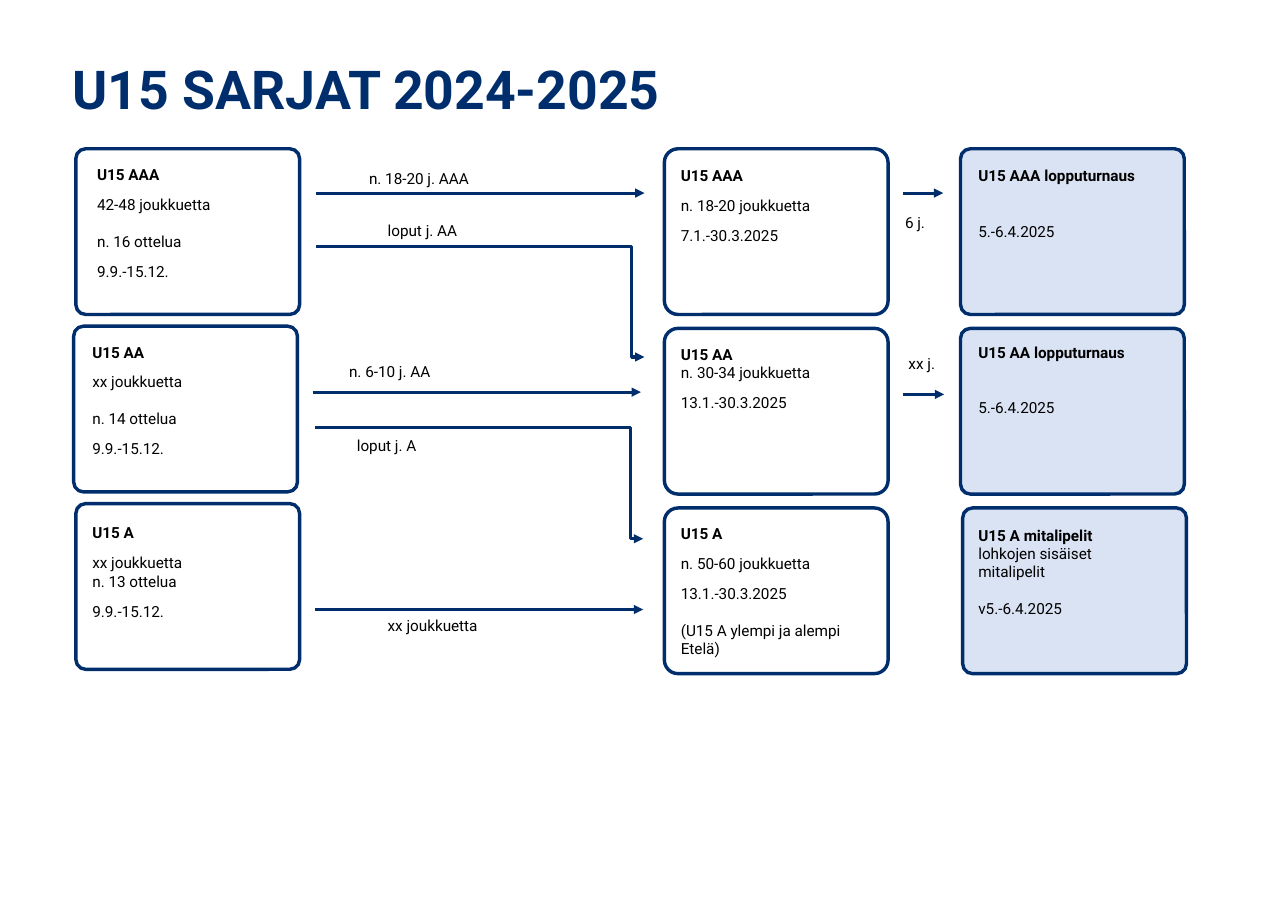
import dataclasses

import lxml.etree
import pptx
import pptx.dml.color
import pptx.enum.shapes
import pptx.enum.text
import pptx.oxml.ns
import pptx.util

Cm = pptx.util.Cm
Pt = pptx.util.Pt
qn = pptx.oxml.ns.qn


@dataclasses.dataclass(frozen=True)
class Theme:
    font: str = "Roboto"
    navy: str = "002E6D"
    black: str = "000000"
    pale: str = "DAE3F3"
    title: float = 35
    body: float = 10
    border: float = 2.25
    arrow: float = 2


THEME = Theme()
WIDTH, HEIGHT = 5.16, 3.82
SMALL, LARGE, DOUBLE = 7.5, 12, 24
ROUND, SOFT = 0.059, 0.083

CARDS = [
    (1.75, 3.43, 2.24, 3.81, ROUND, None,
     [(0, "U15 AAA"), (SMALL, "42-48 joukkuetta"),
      (LARGE, "n. 16 ottelua"), (SMALL, "9.9.-15.12.")]),
    (1.7, 7.52, 2.13, 7.9, ROUND, None,
     [(0, "U15 AA"), (SMALL, "xx joukkuetta"),
      (LARGE, "n. 14 ottelua"), (SMALL, "9.9.-15.12.")]),
    (1.75, 11.61, 2.13, 12.07, ROUND, None,
     [(0, "U15 A"), (SMALL, "xx joukkuetta"),
      (0, "n. 13 ottelua"), (SMALL, "9.9.-15.12.")]),
    (15.32, 3.43, 15.7, 3.84, SOFT, None,
     [(0, "U15 AAA"), (SMALL, "n. 18-20 joukkuetta"),
      (SMALL, "7.1.-30.3.2025")]),
    (15.32, 7.57, 15.7, 7.95, SOFT, None,
     [(0, "U15 AA"), (0, "n. 30-34 joukkuetta"),
      (SMALL, "13.1.-30.3.2025")]),
    (15.32, 11.71, 15.7, 12.09, SOFT, None,
     [(0, "U15 A"), (SMALL, "n. 50-60 joukkuetta"),
      (SMALL, "13.1.-30.3.2025"),
      (LARGE, "(U15 A ylempi ja alempi Etelä)")]),
    (22.15, 3.43, 22.56, 3.84, ROUND, THEME.pale,
     [(0, "U15 AAA lopputurnaus"), (DOUBLE, "5.-6.4.2025")]),
    (22.15, 7.57, 22.56, 7.9, ROUND, THEME.pale,
     [(0, "U15 AA lopputurnaus"), (DOUBLE, "5.-6.4.2025")]),
    (22.2, 11.71, 22.56, 12.12, ROUND, THEME.pale,
     [(0, "U15 A mitalipelit"), (0, "lohkojen sisäiset mitalipelit"),
      (LARGE, "v5.-6.4.2025")]),
]

ARROWS = [
    (7.29, 4.45, 14.86, 4.45),
    (7.29, 5.69, 14.86, 8.23),
    (7.21, 9.04, 14.78, 9.04),
    (7.26, 9.86, 14.83, 12.42),
    (7.27, 14.05, 14.83, 14.05),
    (20.83, 4.45, 21.75, 4.45),
    (20.83, 9.09, 21.77, 9.09),
]

LABELS = [
    (8.26, 3.78, 5.69, "n. 18-20 j. AAA"),
    (8.69, 4.98, 5.69, "loput j. AA"),
    (7.8, 8.23, 5.69, "n. 6-10 j. AA"),
    (7.98, 9.93, 5.69, "loput j. A"),
    (8.69, 14.07, 4.6, "xx joukkuetta"),
    (20.62, 4.78, 1.45, "6 j."),
    (20.7, 8.03, 1.45, "xx j."),
]


def paint(hue):
    return pptx.dml.color.RGBColor.from_string(hue)


def style(para, size, hue, bold=False):
    para.alignment = pptx.enum.text.PP_ALIGN.LEFT
    for run in para.runs:
        font = run.font
        font.name = THEME.font
        font.size = Pt(size)
        font.bold = bold
        font.color.rgb = paint(hue)


def place(shape, left, top, width, height):
    shape.left, shape.top = Cm(left), Cm(top)
    shape.width, shape.height = Cm(width), Cm(height)


def add_title(slide, text):
    title = slide.shapes.title
    place(title, 1.42, 1.17, 24.49, 1.75)
    frame = title.text_frame
    frame.text = text
    frame.auto_size = pptx.enum.text.MSO_AUTO_SIZE.NONE
    frame.vertical_anchor = pptx.enum.text.MSO_ANCHOR.TOP
    style(frame.paragraphs[0], THEME.title, THEME.navy, True)


def add_card(slide, left, top, text_left, text_top, curve, fill, lines):
    kind = pptx.enum.shapes.MSO_SHAPE.ROUNDED_RECTANGLE
    card = slide.shapes.add_shape(
        kind, Cm(left), Cm(top), Cm(WIDTH), Cm(HEIGHT))
    card.adjustments[0] = curve
    card.shadow.inherit = False
    card.line.color.rgb = paint(THEME.navy)
    card.line.width = Pt(THEME.border)
    if fill:
        card.fill.solid()
        card.fill.fore_color.rgb = paint(fill)
    else:
        card.fill.background()
    inset = 0.29 * curve * HEIGHT
    frame = card.text_frame
    frame.word_wrap = True
    frame.vertical_anchor = pptx.enum.text.MSO_ANCHOR.TOP
    frame.margin_left = Cm(text_left - left - inset)
    frame.margin_top = Cm(text_top - top - inset)
    frame.margin_right = Cm(0.6)
    frame.margin_bottom = 0
    frame.text = "\n".join(text for gap, text in lines)
    for rank, (para, (gap, text)) in enumerate(zip(frame.paragraphs, lines)):
        para.space_before = Pt(gap)
        style(para, THEME.body, THEME.black, rank == 0)


def add_arrow(slide, left, top, right, base):
    kinds = pptx.enum.shapes.MSO_CONNECTOR
    bent = top != base
    kind = kinds.ELBOW if bent else kinds.STRAIGHT
    arrow = slide.shapes.add_connector(
        kind, Cm(left), Cm(top), Cm(right), Cm(base))
    arrow.line.color.rgb = paint(THEME.navy)
    arrow.line.width = Pt(THEME.arrow)
    props = arrow._element.spPr
    sub = lxml.etree.SubElement
    sub(props.find(qn("a:ln")), qn("a:tailEnd"), type="triangle")
    sub(props, qn("a:effectLst"))
    if bent:
        guides = props.find(qn("a:prstGeom")).get_or_add_avLst()
        sub(guides, qn("a:gd"), name="adj1", fmla="val 96100")


def add_label(slide, left, top, width, text):
    label = slide.shapes.add_textbox(Cm(left), Cm(top), Cm(width), Cm(1.45))
    frame = label.text_frame
    frame.word_wrap = True
    frame.text = text
    style(frame.paragraphs[0], THEME.body, THEME.black)


def main():
    deck = pptx.Presentation()
    deck.slide_width, deck.slide_height = Cm(29.7), Cm(21)
    slide = deck.slides.add_slide(deck.slide_layouts[5])
    add_title(slide, "U15 SARJAT 2024-2025")
    for card in CARDS:
        add_card(slide, *card)
    for arrow in ARROWS:
        add_arrow(slide, *arrow)
    for label in LABELS:
        add_label(slide, *label)
    deck.save("out.pptx")


if __name__ == "__main__":
    main()
